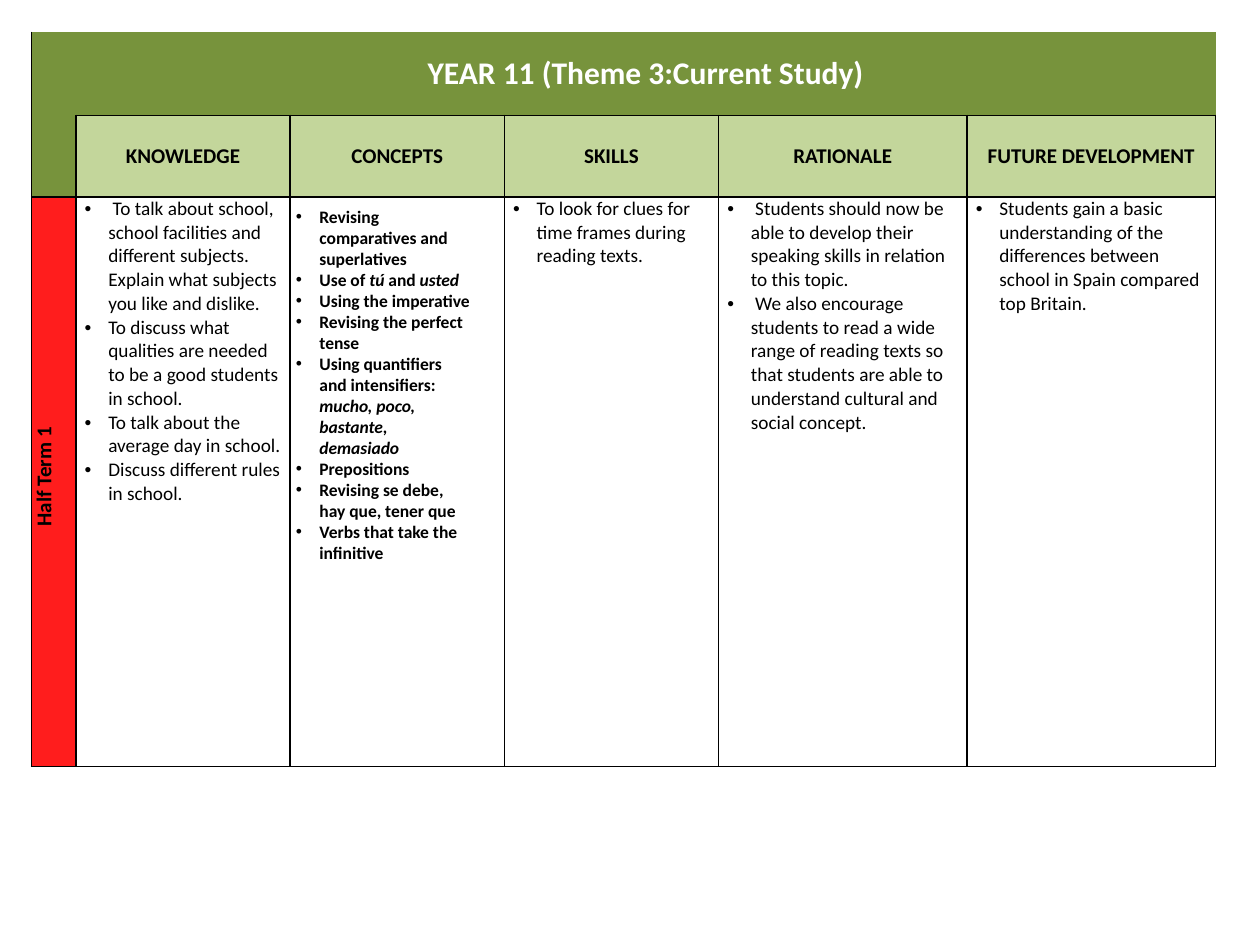
from pptx import Presentation
from pptx.dml.color import RGBColor
from pptx.enum.text import MSO_ANCHOR, MSO_AUTO_SIZE, PP_ALIGN
from pptx.oxml import parse_xml
from pptx.oxml.ns import nsdecls
from pptx.util import Pt

BLACK = RGBColor(0, 0, 0)
WHITE = RGBColor(255, 255, 255)
GREEN = RGBColor(0x77, 0x93, 0x3C)
PALE = RGBColor(0xC3, 0xD6, 0x9B)
RED = RGBColor(0xFF, 0x1D, 0x1D)
FONT = "Calibri"
INDENT = 13.5

COLS = [25.4, 122.4, 122.4, 122.4, 142, 142]
ROWS = [48, 46.5, 325.5]
HEADS = ["KNOWLEDGE", "CONCEPTS", "SKILLS", "RATIONALE", "FUTURE DEVELOPMENT"]
BODY = [
    [
        " To talk about school, school facilities and different subjects. "
        "Explain what subjects you like and dislike.",
        "To discuss what qualities are needed to be a good students in school.",
        "To talk about the average day in school.",
        "Discuss different rules in school.",
    ],
    [],
    ["To look for clues for time frames during reading texts."],
    [
        " Students should now be able to develop their speaking skills "
        "in relation to this topic.",
        " We also encourage students to read a wide range of reading texts so "
        "that students are able to understand cultural and social concept.",
    ],
    [
        "Students gain a basic understanding of the differences between "
        "school in Spain compared top Britain.",
    ],
]
# Every second run of a paragraph is italic.
POINTS = [
    ["Revising comparatives and superlatives"],
    ["Use of ", "tú", " and ", "usted"],
    ["Using the imperative"],
    ["Revising the perfect tense"],
    ["Using quantifiers and intensifiers: ", "mucho, poco, bastante, demasiado"],
    ["Prepositions"],
    ["Revising se debe, hay que, tener que"],
    ["Verbs that take the infinitive"],
]


def add_run(para, text, size, color=BLACK, bold=False, italic=False):
    run = para.add_run()
    run.text = text
    font = run.font
    font.name, font.size = FONT, Pt(size)
    font.bold, font.italic = bold, italic
    font.color.rgb = color


def add_list(frame, items, size, bold=False):
    """Write bulleted paragraphs, each given as a list of runs."""
    for i, parts in enumerate(items):
        para = frame.add_paragraph() if i else frame.paragraphs[0]
        props = para._p.get_or_add_pPr()
        props.set("marL", str(Pt(INDENT)))
        props.set("indent", str(-Pt(INDENT)))
        props.append(parse_xml(f'<a:buFont {nsdecls("a")} typeface="Arial"/>'))
        props.append(parse_xml(f'<a:buChar {nsdecls("a")} char="•"/>'))
        for j, text in enumerate(parts):
            add_run(para, text, size, bold=bold, italic=j % 2 == 1)


def set_lines(cell, sides):
    """Draw the given sides in black and leave the others without a line."""
    props = cell._tc.get_or_add_tcPr()
    for i, side in enumerate("LRTB"):
        fill = (f'<a:solidFill><a:srgbClr val="{BLACK}"/></a:solidFill>'
                if side in sides else "<a:noFill/>")
        props.insert(i, parse_xml(
            f'<a:ln{side} {nsdecls("a")} w="{Pt(1)}">{fill}</a:ln{side}>'))


def edges(row, col):
    if row == 0:
        return "B" + {0: "L", len(COLS) - 1: "R"}.get(col, "")
    return "LRB" if (row, col) == (1, 0) else "LRTB"


def add_head(cell, text, size, color=BLACK):
    cell.vertical_anchor = MSO_ANCHOR.MIDDLE
    para = cell.text_frame.paragraphs[0]
    para.alignment = PP_ALIGN.CENTER
    add_run(para, text, size, color, bold=True)
    return para


def add_plan(slide, left, top):
    shape = slide.shapes.add_table(len(ROWS), len(COLS), Pt(left), Pt(top),
                                   Pt(sum(COLS)), Pt(sum(ROWS)))
    table = shape.table
    table.first_row = table.horz_banding = False
    for col, width in zip(table.columns, COLS):
        col.width = Pt(width)
    for row, height in zip(table.rows, ROWS):
        row.height = Pt(height)

    for r, base in enumerate([GREEN, PALE, WHITE]):
        for c in range(len(COLS)):
            cell = table.cell(r, c)
            cell.margin_left = cell.margin_right = Pt(5)
            cell.margin_top = cell.margin_bottom = 0
            cell.fill.solid()
            first = RED if r == 2 else GREEN
            cell.fill.fore_color.rgb = base if c else first
            set_lines(cell, edges(r, c))
    table.cell(0, 0).merge(table.cell(1, 0))
    table.cell(0, 1).merge(table.cell(0, len(COLS) - 1))

    add_head(table.cell(0, 1), "YEAR 11 (Theme 3:Current Study)", 18, WHITE)
    for c, (head, items) in enumerate(zip(HEADS, BODY), 1):
        add_head(table.cell(1, c), head, 12)
        add_list(table.cell(2, c).text_frame, [[item] for item in items], 11)
    term = table.cell(2, 0)
    para = add_head(term, "Half Term 1", 12)
    para._p.get_or_add_pPr().set("marL", str(Pt(5.65)))
    term._tc.get_or_add_tcPr().set("vert", "vert270")


def add_points(slide, left, top, width, height):
    box = slide.shapes.add_textbox(Pt(left), Pt(top), Pt(width), Pt(height))
    frame = box.text_frame
    frame.word_wrap = True
    frame.auto_size = MSO_AUTO_SIZE.SHAPE_TO_FIT_TEXT
    add_list(frame, POINTS, 10, bold=True)


def main():
    deck = Presentation()
    deck.slide_width, deck.slide_height = Pt(720), Pt(540)
    slide = deck.slides.add_slide(deck.slide_layouts[6])
    add_plan(slide, 18, 18)
    add_points(slide, 162, 114, 114, 247)
    deck.save("out.pptx")


if __name__ == "__main__":
    main()
